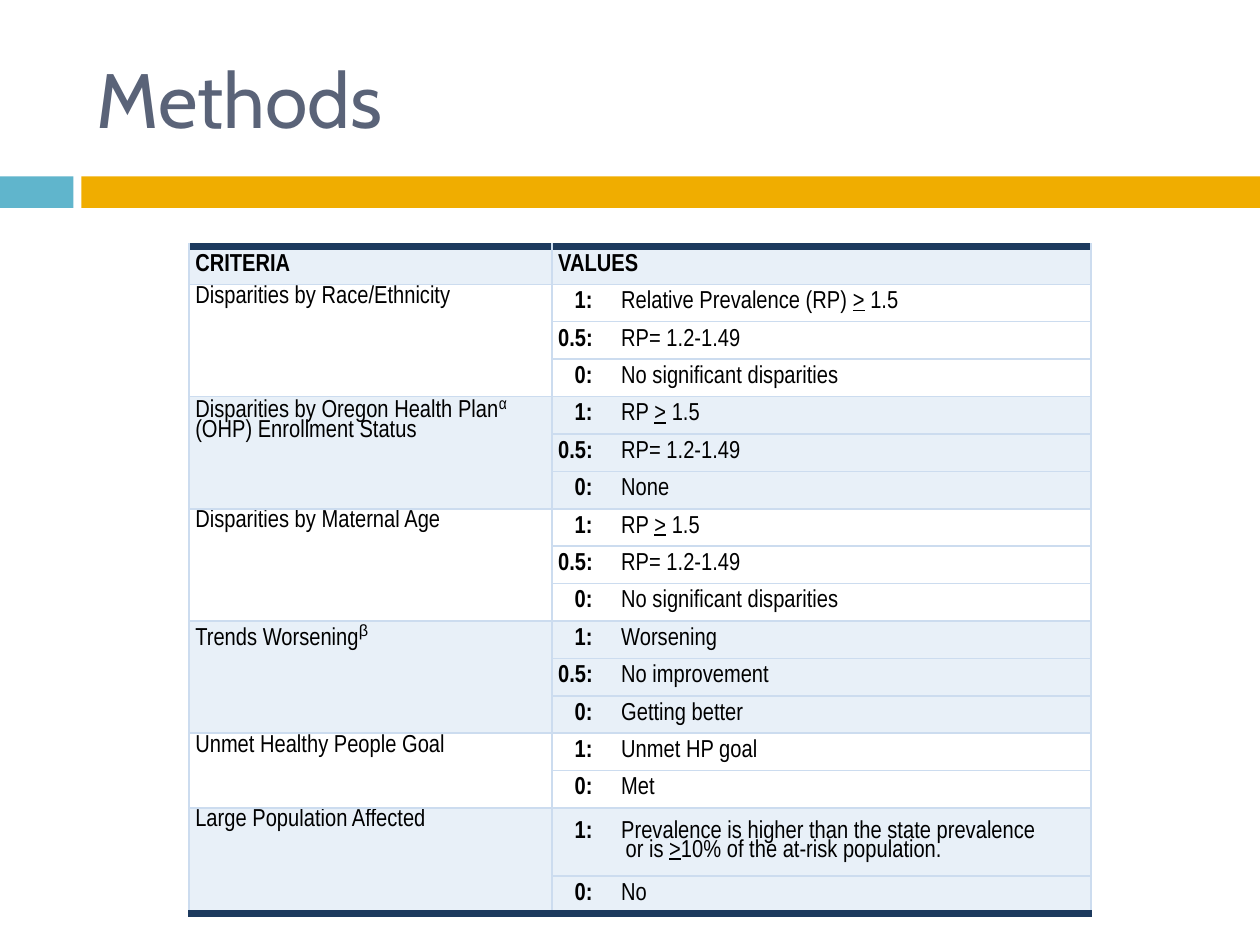
import dataclasses
import typing

import pptx
import pptx.dml.color
import pptx.enum.shapes
import pptx.enum.text
import pptx.oxml
import pptx.oxml.ns
import pptx.util

Pt = pptx.util.Pt
MID = pptx.enum.text.MSO_ANCHOR.MIDDLE
TOP = pptx.enum.text.MSO_ANCHOR.TOP
NS = pptx.oxml.ns.nsdecls("a")
PALE, EDGE, NAVY = "E8F0F8", "CCDCEF", "1D3A5E"
FACE = "Arial Narrow"


@dataclasses.dataclass
class Bar:
    left: float
    width: float
    fill: str


@dataclasses.dataclass
class Group:
    name: str
    values: list[tuple[str, str]]
    mark: str = ""
    face: str = FACE
    tail: str = ""


BARS = [Bar(0, 42, "60B5CC"), Bar(46.5, 673.5, "F0AD00")]
RANGE = ("0.5:", "RP= 1.2-1.49")
OVER = ("1:", "RP > 1.5")
NONE = ("0:", "No significant disparities")
GROUPS = [
    Group("Disparities by Race/Ethnicity",
          [("1:", "Relative Prevalence (RP) > 1.5"), RANGE, NONE]),
    Group("Disparities by Oregon Health Plan", [OVER, RANGE, ("0:", "None")],
          "α", tail=" (OHP) Enrollment Status"),
    Group("Disparities by Maternal Age", [OVER, RANGE, NONE]),
    Group("Trends Worsening",
          [("1:", "Worsening"), ("0.5:", "No improvement"),
           ("0:", "Getting better")], "β", "Arial"),
    Group("Unmet Healthy People Goal", [("1:", "Unmet HP goal"), ("0:", "Met")]),
    Group("Large Population Affected",
          [("1:", "Prevalence is higher than the state prevalence\n"
                  "or is >10% of the at-risk population."), ("0:", "No")]),
]


def tint(text: str) -> pptx.dml.color.RGBColor:
    return pptx.dml.color.RGBColor.from_string(text)


def draw_bar(slide: typing.Any, bar: Bar) -> None:
    rect = pptx.enum.shapes.MSO_SHAPE.RECTANGLE
    shape = slide.shapes.add_shape(rect, Pt(bar.left), Pt(100.8), Pt(bar.width), Pt(18))
    shape.shadow.inherit = False
    shape.fill.solid()
    shape.fill.fore_color.rgb = tint(bar.fill)
    shape.line.fill.background()


def set_edges(cell: typing.Any, edges: dict[str, tuple[str, float]]) -> None:
    """Draw the given sides (L, R, T, B) and hide the others."""
    props = cell._tc.get_or_add_tcPr()
    for spot, side in enumerate("LRTB"):
        color, size = edges.get(side, ("", 0))
        fill = (f'<a:solidFill><a:srgbClr val="{color}"/></a:solidFill>'
                if color else "<a:noFill/>")
        props.insert(spot, pptx.oxml.parse_xml(
            f'<a:ln{side} {NS} w="{int(Pt(size))}">{fill}</a:ln{side}>'))


def set_cell(cell: typing.Any, shade: bool, anchor: typing.Any) -> None:
    cell.margin_left = cell.margin_right = Pt(3.6)
    cell.margin_top = cell.margin_bottom = Pt(2.16)
    cell.vertical_anchor = anchor
    if shade:
        cell.fill.solid()
        cell.fill.fore_color.rgb = tint(PALE)
    else:
        cell.fill.background()


def set_para(para: typing.Any, bold: bool = False) -> None:
    para.line_spacing = 0.82
    font = para.font
    font.name, font.size, font.bold = FACE, Pt(14), bold
    font.color.rgb = tint("000000")


def add_run(para: typing.Any, text: str) -> typing.Any:
    run = para.add_run()
    run.text = text
    return run


def add_text(para: typing.Any, text: str) -> None:
    """Add text with its > sign underlined."""
    head, sign, rest = text.partition(">")
    add_run(para, head)
    if sign:
        add_run(para, sign).font.underline = True
        add_run(para, rest)


def fill_name(cell: typing.Any, group: Group) -> None:
    para = cell.text_frame.paragraphs[0]
    set_para(para)
    add_run(para, group.name)
    if group.mark:
        font = add_run(para, group.mark).font
        font.name, font.size = group.face, Pt(16)
        font._element.set("baseline", "30000")
    if group.tail:
        add_run(para, group.tail)


def fill_value(cell: typing.Any, score: str, text: str) -> None:
    first, *more = text.split("\n")
    para = cell.text_frame.paragraphs[0]
    # Scores end at the right tab, wording starts at the left tab
    para._p.get_or_add_pPr().append(pptx.oxml.parse_xml(
        f'<a:tabLst {NS}><a:tab pos="{int(Pt(19.6))}" algn="r"/>'
        f'<a:tab pos="{int(Pt(36))}" algn="l"/></a:tabLst>'))
    set_para(para)
    add_run(para, f"\t{score}\t").font.bold = True
    add_text(para, first)
    for line in more:
        para = cell.text_frame.add_paragraph()
        para._p.get_or_add_pPr().set("marL", str(int(Pt(38.5))))
        set_para(para)
        add_text(para, line)


def draw_table(slide: typing.Any) -> None:
    count = 2 + sum(len(group.values) for group in GROUPS)
    table = slide.shapes.add_table(
        count, 2, Pt(108), Pt(108.7), Pt(515.6), Pt(413)).table
    table.first_row = table.horz_banding = False
    table.columns[0].width, table.columns[1].width = Pt(207.4), Pt(308.2)
    for row in table.rows:
        row.height = Pt(21.4)
    table.rows[0].height = Pt(32.4)
    table.rows[count - 2].height = Pt(38.9)

    # Open top row and headings
    for col, head in enumerate(("CRITERIA", "VALUES")):
        set_cell(table.cell(0, col), False, TOP)
        cell = table.cell(1, col)
        set_cell(cell, True, MID)
        para = cell.text_frame.paragraphs[0]
        set_para(para, True)
        add_run(para, head)
    table.cell(0, 0).merge(table.cell(0, 1))

    # Criteria, every second one shaded
    top = 2
    for index, group in enumerate(GROUPS):
        shade = index % 2 == 1
        for row, (score, text) in enumerate(group.values, top):
            set_cell(table.cell(row, 0), shade, TOP)
            set_cell(table.cell(row, 1), shade, MID)
            fill_value(table.cell(row, 1), score, text)
        fill_name(table.cell(top, 0), group)
        table.cell(top, 0).merge(table.cell(row, 0))
        top = row + 1

    # Borders: thin grid, heavy rules above and below
    thin, thick = (EDGE, 1), (NAVY, 4.5)
    last = GROUPS[-1].values
    for row in range(count):
        for col in range(2):
            edges = dict.fromkeys("LRTB", thin)
            if row == 0:
                edges = {"B": thick}
            elif row == 1:
                edges["T"] = thick
            elif row == count - 1 or (col == 0 and row == count - len(last)):
                edges["B"] = thick
            set_edges(table.cell(row, col), edges)


def main() -> None:
    deck = pptx.Presentation()
    deck.slide_width, deck.slide_height = Pt(720), Pt(540)
    slide = deck.slides.add_slide(deck.slide_layouts[5])
    for bar in BARS:
        draw_bar(slide, bar)

    # Title
    title = slide.shapes.title
    title.left, title.top, title.width, title.height = Pt(48), Pt(21.6), Pt(636), Pt(68.4)
    title.text_frame.text = "Methods"
    title.text_frame.vertical_anchor = MID
    para = title.text_frame.paragraphs[0]
    para.alignment = pptx.enum.text.PP_ALIGN.LEFT
    para.font.name, para.font.size = "Cabin", Pt(44)
    para.font.color.rgb = tint("5A6378")

    draw_table(slide)
    deck.save("out.pptx")


if __name__ == "__main__":
    main()
